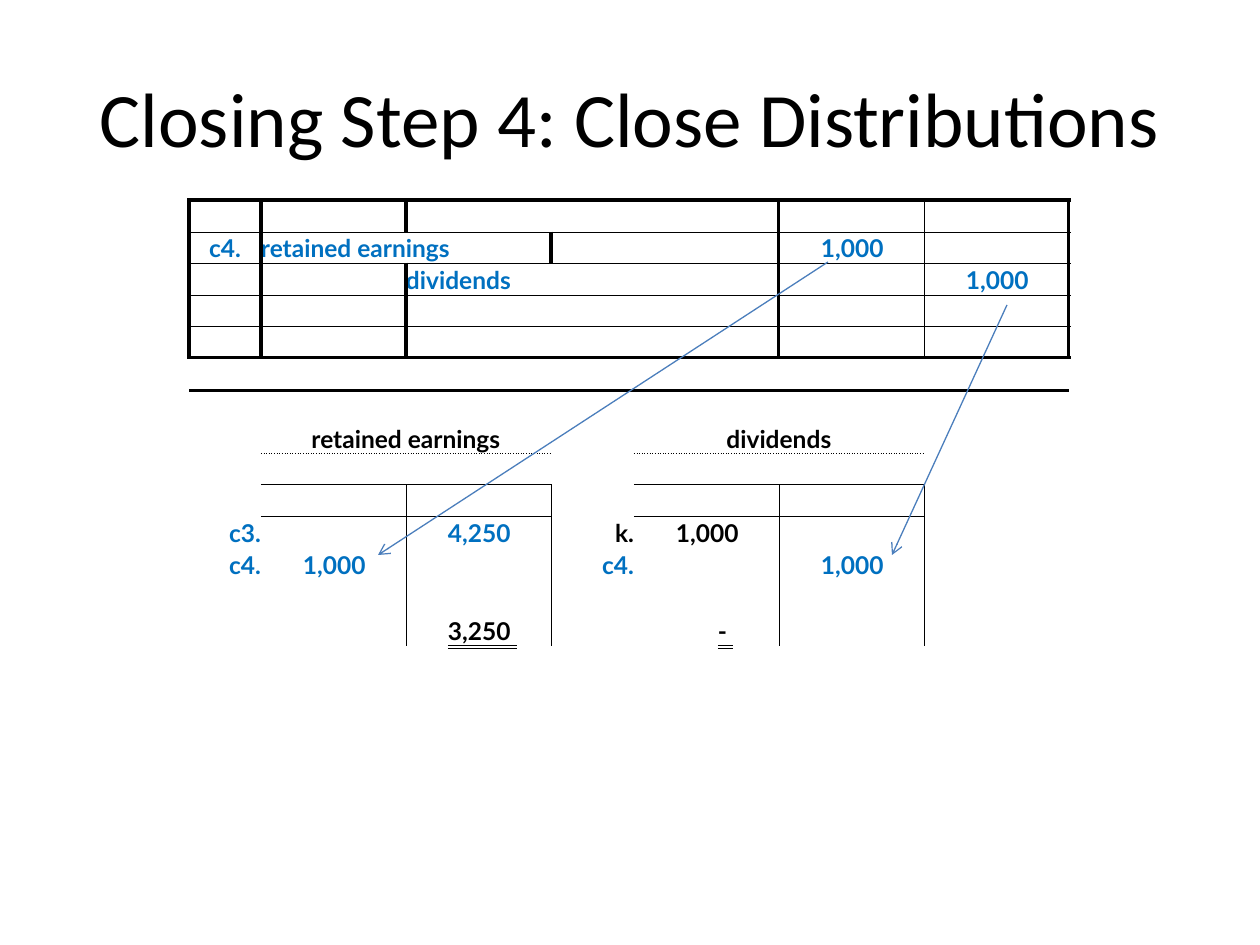
import pptx
import pptx.dml.color
import pptx.enum.shapes
import pptx.enum.text
import pptx.oxml.ns
import pptx.util
from lxml import etree

ALIGN = pptx.enum.text.PP_ALIGN
ANCHOR = pptx.enum.text.MSO_ANCHOR
BLACK, BLUE, ARROW_BLUE = "000000", "0070C0", "4B7EBC"
NO_STYLE = "{2D5ABB26-0587-4C30-8999-92F81FD0307C}"
TEXT_SIZE = 14
AMOUNT_INDENT, DASH_INDENT = 42, 84

# Content
TITLE = "Closing Step 4: Close Distributions"
TABLE_LEFT, TABLE_TOP = 189, 200
COLUMNS = [72, 145, 145, 83, 145, 145, 145]
ROWS = [32, 31, 32, 31, 32, 33, 31, 32, 31, 32, 31, 32, 31, 35]

CENTERED = {"align": ALIGN.CENTER}
RIGHT = {"align": ALIGN.RIGHT}
AMOUNT = {"indent": AMOUNT_INDENT}
TOTAL = {"color": BLACK, "underline": pptx.enum.text.MSO_UNDERLINE.DOUBLE_LINE}
ENTRIES = [  # row, column, text, format
    (1, 0, "c4.", CENTERED),
    (1, 1, "retained earnings", {}),
    (1, 5, "1,000", AMOUNT),
    (2, 2, "dividends", {}),
    (2, 6, "1,000", AMOUNT),
    (7, 1, "retained earnings", {"color": BLACK, **CENTERED}),
    (7, 4, "dividends", {"color": BLACK, **CENTERED}),
    (10, 0, "c3.", RIGHT),
    (10, 2, "4,250", AMOUNT),
    (10, 3, "k.", {"color": BLACK, **RIGHT}),
    (10, 4, "1,000", {"color": BLACK, **AMOUNT}),
    (11, 0, "c4.", RIGHT),
    (11, 1, "1,000", AMOUNT),
    (11, 3, "c4.", RIGHT),
    (11, 5, "1,000", AMOUNT),
    (13, 2, "\t3,250 ", {"tab": AMOUNT_INDENT, **TOTAL}),
    (13, 4, "\t- ", {"tab": DASH_INDENT, **TOTAL}),
]
MERGES = [(1, 1), (7, 1), (7, 4)]  # each joins two columns

# Rules: grid edge, first and last cell along it, points, dash
HORIZONTAL = [(edge, 0, 7, 2 if edge in (0, 5) else 0.5, "solid") for edge in range(6)]
VERTICAL = [(edge, 0, 5, 0.5 if edge == 6 else 2, "solid") for edge in (0, 1, 5, 6, 7)]
for account in (1, 4):
    HORIZONTAL += [(8, account, account + 2, 0.5, "sysDot"),
                   (9, account, account + 2, 0.5, "solid")]
    VERTICAL.append((account + 1, 9, 14, 0.5, "solid"))

ARROWS = [((828, 262), (378, 555)), ((1007, 305), (892, 555))]


def px(value):
    return round(value * 914400 / 126)


def rgb(color):
    return pptx.dml.color.RGBColor.from_string(color)


def add_element(parent, tag, **attributes):
    return etree.SubElement(parent, pptx.oxml.ns.qn(tag), attributes)


def write(frame, text, size=TEXT_SIZE, font="Lato", color=BLUE, bold=True,
          align=ALIGN.LEFT, indent=0, tab=None, underline=None):
    paragraph = frame.paragraphs[0]
    paragraph.alignment = align
    properties = paragraph._p.get_or_add_pPr()
    if indent:
        properties.set("marL", str(px(indent)))
        properties.set("indent", "0")
    if tab:
        stops = add_element(properties, "a:tabLst")
        add_element(stops, "a:tab", pos=str(px(tab)), algn="l")
    run = paragraph.add_run()
    run.text = text
    run.font.size = pptx.util.Pt(size)
    run.font.name = font
    run.font.bold = bold
    run.font.underline = underline
    run.font.color.rgb = rgb(color)


def collect_borders():
    borders = {}
    for edge, first, last, width, dash in HORIZONTAL:
        for column in range(first, last):
            borders[edge - 1, column, "a:lnB"] = (width, dash)
            borders[edge, column, "a:lnT"] = (width, dash)
    for edge, first, last, width, dash in VERTICAL:
        for row in range(first, last):
            borders[row, edge - 1, "a:lnR"] = (width, dash)
            borders[row, edge, "a:lnL"] = (width, dash)
    return borders


def add_border(cell, side, width, dash):
    line = add_element(cell._tc.get_or_add_tcPr(), side, w=str(pptx.util.Pt(width)))
    add_element(add_element(line, "a:solidFill"), "a:srgbClr", val=BLACK)
    add_element(line, "a:prstDash", val=dash)


def add_ledger(slide):
    frame = slide.shapes.add_table(len(ROWS), len(COLUMNS), px(TABLE_LEFT), px(TABLE_TOP),
                                   px(sum(COLUMNS)), px(sum(ROWS)))
    table = frame.table
    table.first_row = table.horz_banding = False
    table._tbl.tblPr.find(pptx.oxml.ns.qn("a:tableStyleId")).text = NO_STYLE
    for column, width in zip(table.columns, COLUMNS):
        column.width = px(width)
    for row, height in zip(table.rows, ROWS):
        row.height = px(height)

    borders = collect_borders()
    entries = {(row, column): (text, style) for row, column, text, style in ENTRIES}
    for row in range(len(ROWS)):
        for column in range(len(COLUMNS)):
            cell = table.cell(row, column)
            cell.margin_left = cell.margin_right = cell.margin_top = cell.margin_bottom = 0
            cell.vertical_anchor = ANCHOR.BOTTOM
            for side in ("a:lnL", "a:lnR", "a:lnT", "a:lnB"):
                if (row, column, side) in borders:
                    add_border(cell, side, *borders[row, column, side])
            cell.fill.background()
            if (row, column) in entries:
                text, style = entries[row, column]
                write(cell.text_frame, text, **style)
            else:  # keeps empty rows from growing
                add_element(cell.text_frame.paragraphs[0]._p, "a:endParaRPr",
                            sz=str(TEXT_SIZE * 100))
    for row, column in MERGES:
        table.cell(row, column).merge(table.cell(row, column + 1))


def add_arrow(slide, start, end):
    arrow = slide.shapes.add_connector(pptx.enum.shapes.MSO_CONNECTOR.STRAIGHT,
                                       *map(px, start + end))
    arrow.line.color.rgb = rgb(ARROW_BLUE)
    arrow.line.width = pptx.util.Pt(0.75)
    add_element(arrow.line._get_or_add_ln(), "a:tailEnd", type="arrow")
    add_element(arrow._element.spPr, "a:effectLst")


def main():
    presentation = pptx.Presentation()
    presentation.slide_width, presentation.slide_height = px(1260), px(945)
    slide = presentation.slides.add_slide(presentation.slide_layouts[6])

    # Title
    title = slide.shapes.add_textbox(px(63), px(38), px(1134), px(157)).text_frame
    title.word_wrap = True
    title.vertical_anchor = ANCHOR.MIDDLE
    write(title, TITLE, size=44, font="Calibri", color=BLACK, bold=False, align=ALIGN.CENTER)

    # Journal entry, accounts and posting arrows
    add_ledger(slide)
    for start, end in ARROWS:
        add_arrow(slide, start, end)
    presentation.save("out.pptx")


if __name__ == "__main__":
    main()
